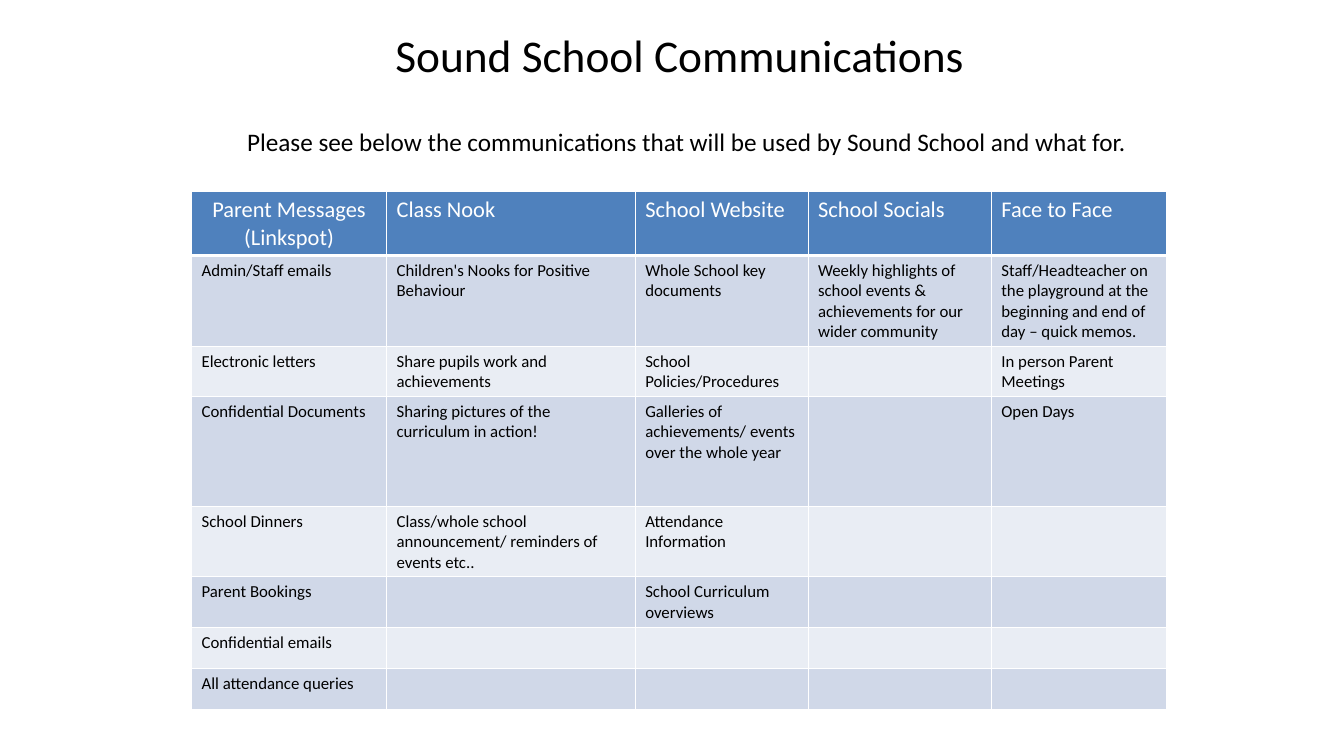
"""Build the Sound School communications slide with its channel table."""
import lxml.etree
import pptx
import pptx.dml.color
import pptx.enum.text
import pptx.oxml.ns
import pptx.util

Cm = pptx.util.Cm
ALIGN = pptx.enum.text.PP_ALIGN
ANCHOR = pptx.enum.text.MSO_ANCHOR
COLOURS = {
    "header": "4F81BD",
    "dark band": "D0D8E8",
    "light band": "E9EDF4",
    "black": "000000",
    "white": "FFFFFF",
}


def style_paragraph(paragraph, size, colour, align=ALIGN.LEFT):
    paragraph.alignment = align
    paragraph.font.name = "Calibri"
    paragraph.font.size = pptx.util.Pt(size)
    paragraph.font.bold = False
    paragraph.font.color.rgb = pptx.dml.color.RGBColor.from_string(COLOURS[colour])


def add_border(cell, side, width):
    properties = cell._tc.get_or_add_tcPr()
    line = lxml.etree.SubElement(properties, pptx.oxml.ns.qn(f"a:ln{side}"), w=str(pptx.util.Pt(width)))
    fill = lxml.etree.SubElement(line, pptx.oxml.ns.qn("a:solidFill"))
    lxml.etree.SubElement(fill, pptx.oxml.ns.qn("a:srgbClr"), val=COLOURS["white"])


presentation = pptx.Presentation()
presentation.slide_width = Cm(50.8)
presentation.slide_height = Cm(28.58)
slide = presentation.slides.add_slide(presentation.slide_layouts[6])

headings = [
    ("Sound School Communications", 9.96, 0.86, 31.45, 2.36, 48.6, ALIGN.CENTER, ANCHOR.MIDDLE),
    ("Please see below the communications that will be used by Sound School and what for.",
     9.09, 4.65, 34.16, 1.42, 27, ALIGN.LEFT, ANCHOR.TOP),
]
for text, left, top, width, height, size, align, anchor in headings:
    shape = slide.shapes.add_textbox(Cm(left), Cm(top), Cm(width), Cm(height))
    shape.text_frame.word_wrap = True
    shape.text_frame.vertical_anchor = anchor
    paragraph = shape.text_frame.paragraphs[0]
    paragraph.text = text
    style_paragraph(paragraph, size, "black", align)

rows = [
    ["Parent Messages\n(Linkspot)", "Class Nook", "School Website", "School Socials", "Face to Face"],
    ["Admin/Staff emails", "Children's Nooks for Positive Behaviour", "Whole School key documents",
     "Weekly highlights of school events & achievements for our wider community",
     "Staff/Headteacher on the playground at the beginning and end of day – quick memos."],
    ["Electronic letters", "Share pupils work and achievements", "School Policies/Procedures", "",
     "In person Parent Meetings"],
    ["Confidential Documents", "Sharing pictures of the curriculum in action!",
     "Galleries of achievements/ events over the whole year", "", "Open Days"],
    ["School Dinners", "Class/whole school announcement/ reminders of events etc..",
     "Attendance Information", "", ""],
    ["Parent Bookings", "", "School Curriculum overviews", "", ""],
    ["Confidential emails", "", "", "", ""],
    ["All attendance queries", "", "", "", ""],
]
column_widths = [7.37, 9.4, 6.53, 6.93, 6.63]
row_heights = [2.41, 3.43, 1.9, 4.14, 2.67, 1.9, 1.55, 1.55]

table = slide.shapes.add_table(
    len(rows), len(column_widths), Cm(7.24), Cm(7.24),
    Cm(sum(column_widths)), Cm(sum(row_heights)),
).table
for column, width in zip(table.columns, column_widths):
    column.width = Cm(width)

for row_index, texts in enumerate(rows):
    table.rows[row_index].height = Cm(row_heights[row_index])
    is_header = row_index == 0
    band = "header" if is_header else "dark band" if row_index % 2 else "light band"
    for column_index, text in enumerate(texts):
        cell = table.cell(row_index, column_index)
        cell.text = text
        cell.margin_left = cell.margin_right = Cm(0.38)
        cell.margin_top = cell.margin_bottom = Cm(0.19)
        for side in "LRTB":
            add_border(cell, side, 3 if is_header and side == "B" else 1)
        cell.fill.solid()
        cell.fill.fore_color.rgb = pptx.dml.color.RGBColor.from_string(COLOURS[band])
        align = ALIGN.CENTER if is_header and column_index == 0 else ALIGN.LEFT
        for paragraph in cell.text_frame.paragraphs:
            style_paragraph(paragraph, 24 if is_header else 18, "white" if is_header else "black", align)

presentation.save("out.pptx")
